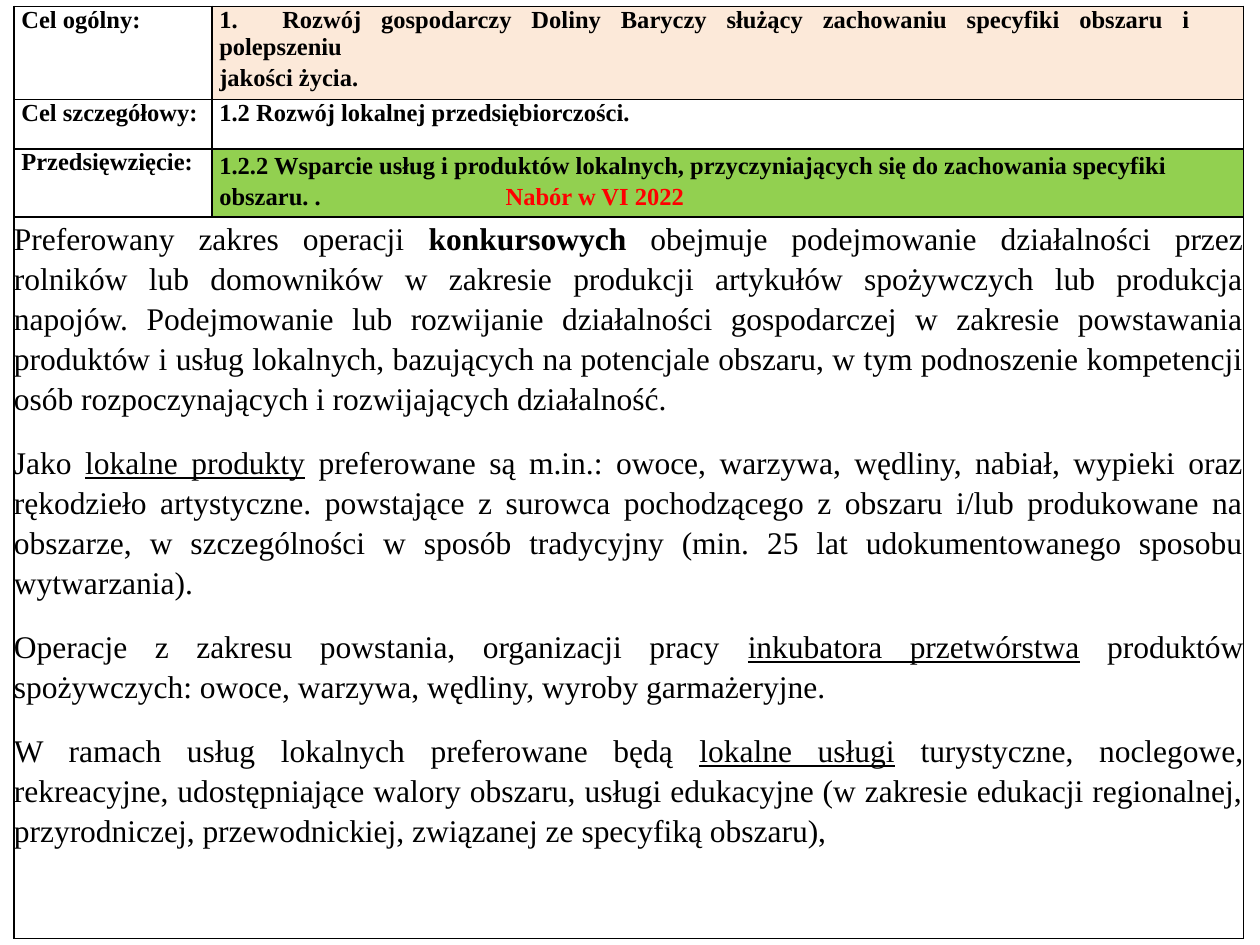
from dataclasses import dataclass

from lxml import etree
from pptx import Presentation
from pptx.dml.color import RGBColor
from pptx.enum.text import PP_ALIGN
from pptx.oxml.ns import qn
from pptx.util import Cm, Pt

LEFT, JUSTIFY = PP_ALIGN.LEFT, PP_ALIGN.JUSTIFY


@dataclass(frozen=True)
class Theme:
    """Colours, font and type sizes in points."""

    font: str = "Times New Roman"
    ink: str = "000000"
    alert: str = "FF0000"
    peach: str = "FCE9D9"
    green: str = "92D050"
    heading: float = 14
    body: float = 18
    border: float = 1


THEME = Theme()
BOX = (0.28, 0.13, 24.79, 18.79)
LABEL_WIDTH = 3.99
GOAL_HEIGHTS = (1.88, 0.99, 1.37)
PADDING = 0.15

LABELS = ("Cel ogólny:", "Cel szczegółowy:", "Przedsięwzięcie:")
GENERAL_GOAL = (
    "1.\tRozwój gospodarczy Doliny Baryczy służący zachowaniu specyfiki obszaru i polepszeniu",
    "jakości życia.",
)
SPECIFIC_GOAL = "1.2 Rozwój lokalnej przedsiębiorczości."
PROJECT = (
    "1.2.2 Wsparcie usług i produktów lokalnych, przyczyniających się do "
    "zachowania specyfiki obszaru. ."
)
CALL = "Nabór w VI 2022"
SCOPE = (
    (
        ("Preferowany zakres operacji ", ""),
        ("konkursowych", "bold"),
        (" obejmuje podejmowanie działalności przez rolników lub domowników w zakresie "
         "produkcji artykułów spożywczych lub produkcja napojów. Podejmowanie lub "
         "rozwijanie działalności gospodarczej w zakresie powstawania produktów i usług "
         "lokalnych, bazujących na potencjale obszaru, w tym podnoszenie kompetencji "
         "osób rozpoczynających i rozwijających działalność.", ""),
    ),
    (
        ("Jako ", ""),
        ("lokalne produkty", "underline"),
        (" preferowane są m.in.: owoce, warzywa, wędliny, nabiał, wypieki oraz rękodzieło "
         "artystyczne. powstające z surowca pochodzącego z obszaru i/lub produkowane na "
         "obszarze, w szczególności w sposób tradycyjny (min. 25 lat udokumentowanego "
         "sposobu wytwarzania).", ""),
    ),
    (
        ("Operacje z zakresu powstania, organizacji pracy ", ""),
        ("inkubatora przetwórstwa", "underline"),
        (" produktów spożywczych: owoce, warzywa, wędliny, wyroby garmażeryjne.", ""),
    ),
    (
        ("W ramach usług lokalnych preferowane będą ", ""),
        ("lokalne usługi", "underline"),
        (" turystyczne, noclegowe, rekreacyjne, udostępniające walory obszaru, usługi "
         "edukacyjne (w zakresie edukacji regionalnej, przyrodniczej, przewodnickiej, "
         "związanej ze specyfiką obszaru),", ""),
    ),
)


def add_span(para, text, size, color=THEME.ink, bold=False, underline=False):
    """Append one formatted run to a paragraph and return it."""
    span = para.add_run()
    span.text = text
    span.font.name = THEME.font
    span.font.size = Pt(size)
    span.font.bold = bold
    span.font.underline = underline
    span.font.color.rgb = RGBColor.from_string(color)
    return span


def add_heading(para, text, color=THEME.ink):
    """Append a bold run in the heading size."""
    return add_span(para, text, THEME.heading, color, bold=True)


def style_cell(cell, fill=None, padding=PADDING):
    """Set the margins, borders and fill of a cell."""
    cell.margin_right = cell.margin_top = cell.margin_bottom = 0
    cell.margin_left = Cm(padding)
    properties = cell._tc.get_or_add_tcPr()
    for side in ("lnL", "lnR", "lnT", "lnB"):
        line = etree.SubElement(properties, qn(f"a:{side}"), w=str(Pt(THEME.border)))
        solid = etree.SubElement(line, qn("a:solidFill"))
        etree.SubElement(solid, qn("a:srgbClr"), val=THEME.ink)
    if fill:
        cell.fill.solid()
        cell.fill.fore_color.rgb = RGBColor.from_string(fill)
    else:
        cell.fill.background()


def fill_goals(table):
    """Write the labelled goal rows at the top of the table."""
    for row, (label, fill) in enumerate(zip(LABELS, (THEME.peach, None, THEME.green))):
        style_cell(table.cell(row, 0))
        style_cell(table.cell(row, 1), fill)
        add_heading(table.cell(row, 0).text_frame.paragraphs[0], label)

    general, specific, project = (table.cell(row, 1) for row in range(len(LABELS)))
    general.margin_right = Cm(1.07)
    first = general.text_frame.paragraphs[0]
    first.alignment = JUSTIFY
    add_heading(first, GENERAL_GOAL[0])
    second = general.text_frame.add_paragraph()
    second.alignment = LEFT
    second.space_before = Pt(2.5)
    add_heading(second, GENERAL_GOAL[1])

    add_heading(specific.text_frame.paragraphs[0], SPECIFIC_GOAL)

    para = project.text_frame.paragraphs[0]
    para.line_spacing = 1.15
    add_heading(para, PROJECT)
    gap = add_heading(para, " ")
    gap.font._element.set("spc", "10200")
    add_heading(para, CALL, THEME.alert)


def fill_scope(table, row):
    """Write the preferred scope into one merged row."""
    cell = table.cell(row, 0)
    cell.merge(table.cell(row, 1))
    for column in range(2):
        style_cell(table.cell(row, column), padding=0)
    frame = cell.text_frame
    for index, spans in enumerate(SCOPE):
        para = frame.add_paragraph() if index else frame.paragraphs[0]
        para.alignment = JUSTIFY
        para.line_spacing = 1.15
        para.space_before = Pt(3.6)
        para.space_after = Pt(10)
        for text, style in spans:
            add_span(para, text, THEME.body,
                     bold=style == "bold", underline=style == "underline")


def add_goal_table(page, box):
    """Place the goal table in the given box of centimetres."""
    left, top, width, height = box
    heights = (*GOAL_HEIGHTS, height - sum(GOAL_HEIGHTS))
    table = page.shapes.add_table(
        len(heights), 2, Cm(left), Cm(top), Cm(width), Cm(height)).table
    table.first_row = table.horz_banding = False
    for column, size in zip(table.columns, (LABEL_WIDTH, width - LABEL_WIDTH)):
        column.width = Cm(size)
    for row, size in zip(table.rows, heights):
        row.height = Cm(size)
    fill_goals(table)
    fill_scope(table, len(GOAL_HEIGHTS))


def main():
    """Build and save the deck."""
    deck = Presentation()
    deck.slide_width, deck.slide_height = Cm(25.4), Cm(19.05)
    page = deck.slides.add_slide(deck.slide_layouts[6])
    add_goal_table(page, BOX)
    deck.save("out.pptx")


if __name__ == "__main__":
    main()
